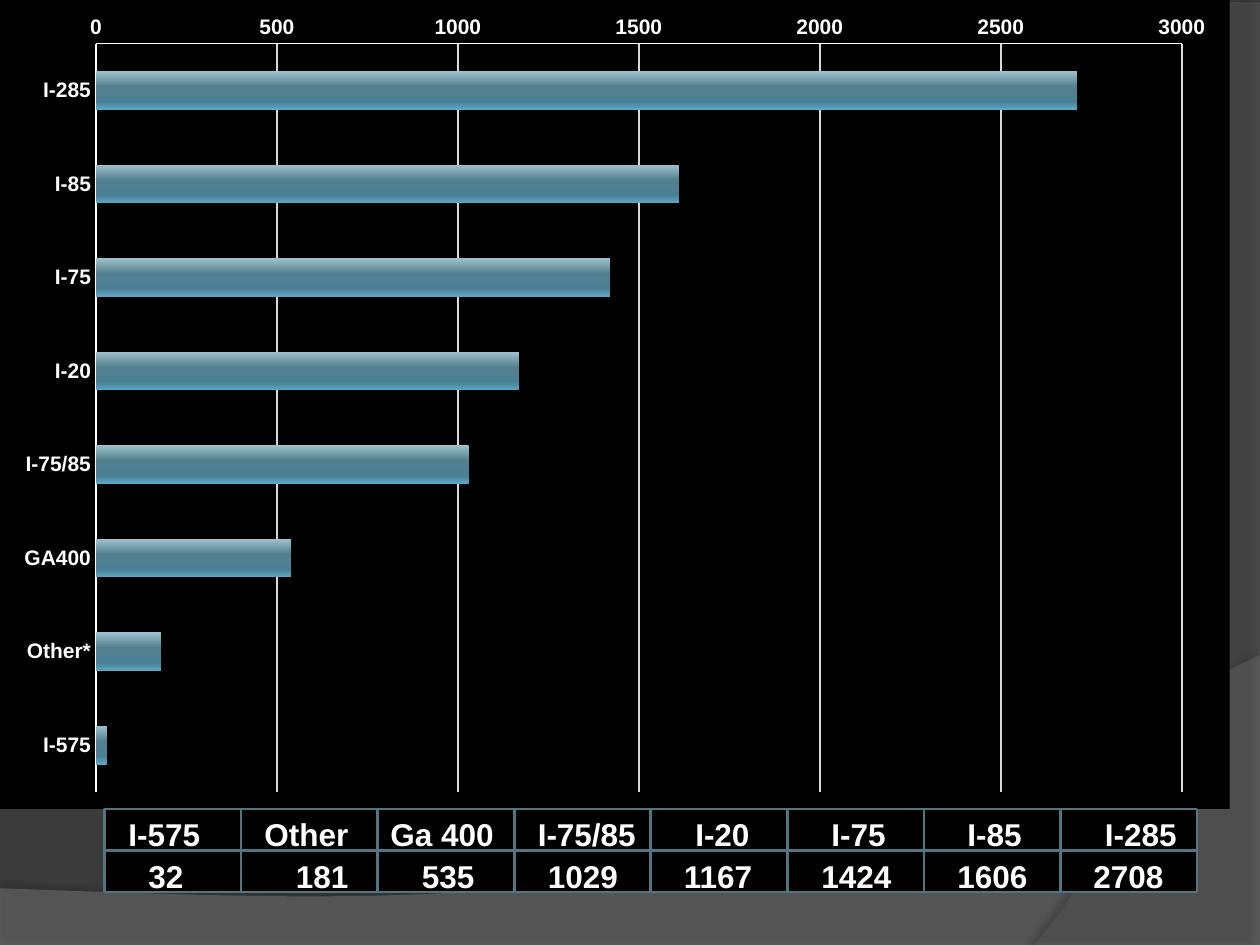
from lxml.etree import SubElement
from pptx import Presentation
from pptx.chart.data import CategoryChartData as ChartData
from pptx.dml.color import RGBColor as Rgb
from pptx.enum.chart import XL_CHART_TYPE as ChartKind, XL_TICK_MARK as Tick
from pptx.enum.shapes import MSO_SHAPE as Preset
from pptx.enum.text import MSO_AUTO_SIZE as AutoSize
from pptx.oxml import parse_xml
from pptx.oxml.ns import nsdecls, qn
from pptx.util import Inches, Pt

COLORS = {
    "page": "3B3B3B", "black": "000000", "white": "FFFFFF", "grid": "D9D9D9",
    "border": "517682", "swoosh": "7F7F7F", "side": "5E5E5E",
}
BAR_STOPS = [(0, "9FC1CD"), (40, "53808F"), (80, "4A8096"), (100, "5AA8C4")]
ROADS = ["I-285", "I-85", "I-75", "I-20", "I-75/85", "GA400", "Other*", "I-575"]
COUNTS = [2710, 1610, 1420, 1170, 1030, 540, 180, 30]
LABELS = [
    ("I-575", 0.92, 0.92), ("Other", 2, 0.92), ("Ga 400", 3, 1.25), ("I-75/85", 4.17, 1),
    ("I-20", 5.42, 0.83), ("I-75", 6.5, 0.67), ("I-85", 7.58, 0.67), ("I-285", 8.67, 0.78),
]
VALUES = [
    ("32", 1.08, 0.58), ("181", 2.25, 0.75), ("535", 3.25, 0.62), ("1029", 4.25, 0.76),
    ("1167", 5.33, 0.75), ("1424", 6.42, 0.76), ("1606", 7.5, 0.76), ("2708", 8.58, 0.76),
]
GRID_LEFT, GRID_TOP, GRID_WIDTH, ROW_HEIGHT = 0.83, 6.42, 8.67, 0.33


def color(name):
    return Rgb.from_string(COLORS[name])


def curve(start, first, second, end, steps=40):
    points = []
    for step in range(1, steps + 1):
        t = step / steps
        weights = ((1 - t) ** 3, 3 * t * (1 - t) ** 2, 3 * t * t * (1 - t), t ** 3)
        points.append(tuple(
            sum(weight * value for weight, value in zip(weights, axis))
            for axis in zip(start, first, second, end)
        ))
    return points


def solid_props(name):
    return parse_xml(
        f'<c:spPr {nsdecls("c", "a")}><a:solidFill><a:srgbClr val="{COLORS[name]}"/>'
        '</a:solidFill><a:ln><a:noFill/></a:ln></c:spPr>'
    )


class Slide:
    text_format = {"name": "Arial", "size": Pt(18), "bold": True}
    axis_format = {"name": "Arial", "size": Pt(12), "bold": True}

    def __init__(self, deck):
        self.page = deck.slides.add_slide(deck.slide_layouts[6])
        self.shapes = self.page.shapes
        fill = self.page.background.fill
        fill.solid()
        fill.fore_color.rgb = color("page")

    def style(self, font, values):
        for key, value in values.items():
            setattr(font, key, value)
        font.color.rgb = color("white")

    def backdrop(self, points, fill, opacity, shade, distance, angle):
        corners = [(Inches(x), Inches(y)) for x, y in points]
        builder = self.shapes.build_freeform(*corners[0])
        builder.add_line_segments(corners[1:], close=True)
        shape = builder.convert_to_shape()
        shape.fill.solid()
        shape.fill.fore_color.rgb = color(fill)
        shape.line.fill.background()
        shape.shadow.inherit = False
        props = shape.element.spPr
        tint = props.find(qn("a:solidFill"))[0]
        SubElement(tint, qn("a:alpha"), val=str(opacity * 1000))
        shadow = SubElement(
            props.find(qn("a:effectLst")), qn("a:outerShdw"), blurRad=str(Pt(4)),
            dist=str(Pt(distance)), dir=str(angle * 60000), algn="ctr", rotWithShape="0",
        )
        tone = SubElement(shadow, qn("a:srgbClr"), val=COLORS["black"])
        SubElement(tone, qn("a:alpha"), val=str(shade * 1000))

    def bar_chart(self, left, top, width, height):
        data = ChartData(number_format="General")
        data.categories = ROADS
        data.add_series("Series 1", COUNTS)
        chart = self.shapes.add_chart(
            ChartKind.BAR_CLUSTERED, Inches(left), Inches(top),
            Inches(width), Inches(height), data,
        ).chart
        chart.has_legend = False
        chart.has_title = False
        self.style(chart.font, self.axis_format)
        plot = chart.plots[0]
        plot.gap_width = 146
        plot.vary_by_categories = False
        for axis in (chart.category_axis, chart.value_axis):
            axis.major_tick_mark = axis.minor_tick_mark = Tick.NONE
            self.style(axis.tick_labels.font, self.axis_format)
            axis.format.line.color.rgb = color("white")
            axis.format.line.width = Pt(0.75)
        chart.category_axis.reverse_order = True
        scale = chart.value_axis
        for key, value in {"minimum_scale": 0, "maximum_scale": 3000, "major_unit": 500}.items():
            setattr(scale, key, value)
        scale.has_major_gridlines = True
        scale.major_gridlines.format.line.color.rgb = color("grid")
        scale.major_gridlines.format.line.width = Pt(1)
        self.bar_fill(plot.series[0])
        self.chart_frame(chart)

    def bar_fill(self, series):
        series.invert_if_negative = False
        series.format.fill.solid()
        props = series._element.find(qn("c:spPr"))
        stops = "".join(
            f'<a:gs pos="{place * 1000}"><a:srgbClr val="{tone}"/></a:gs>'
            for place, tone in BAR_STOPS
        )
        props.replace(props.find(qn("a:solidFill")), parse_xml(
            f'<a:gradFill {nsdecls("a")} rotWithShape="1"><a:gsLst>{stops}</a:gsLst>'
            '<a:lin ang="5400000" scaled="0"/></a:gradFill>'
        ))

    def chart_frame(self, chart):
        body = chart.element.find(qn("c:chart"))
        body.addnext(solid_props("black"))
        area = body.find(qn("c:plotArea"))
        area.append(solid_props("black"))
        for layout in area.findall(qn("c:layout")):
            area.remove(layout)
        layout = SubElement(area, qn("c:layout"))
        area.insert(0, layout)
        manual = SubElement(layout, qn("c:manualLayout"))
        settings = {
            "layoutTarget": "inner", "xMode": "edge", "yMode": "edge",
            "x": "0.078", "y": "0.054", "w": "0.883", "h": "0.925",
        }
        for key, value in settings.items():
            SubElement(manual, qn(f"c:{key}"), val=value)

    def cell(self, left, top, width, height):
        box = self.shapes.add_shape(
            Preset.RECTANGLE, Inches(left), Inches(top), Inches(width), Inches(height)
        )
        box.shadow.inherit = False
        box.fill.solid()
        box.fill.fore_color.rgb = color("black")
        box.line.color.rgb = color("border")
        box.line.width = Pt(1.5)

    def text(self, words, left, top, width):
        box = self.shapes.add_textbox(Inches(left), Inches(top), Inches(width), Inches(0.4))
        frame = box.text_frame
        frame.word_wrap = True
        frame.auto_size = AutoSize.SHAPE_TO_FIT_TEXT
        span = frame.paragraphs[0].add_run()
        span.text = words
        self.style(span.font, self.text_format)

    def row(self, top, entries):
        width = GRID_WIDTH / len(entries)
        for column in range(len(entries)):
            self.cell(GRID_LEFT + column * width, top, width, ROW_HEIGHT)
        for words, left, box_width in entries:
            self.text(words, left, top, box_width)


def main():
    deck = Presentation()
    deck.slide_width, deck.slide_height = Inches(10), Inches(7.5)
    slide = Slide(deck)
    wave = [(0, 7.05), (0, 7.51), (10, 7.51), (10, 5.2)]
    wave += curve((10, 5.2), (5.59, 7.29), (3.91, 7.19), (0, 7.05))[:-1]
    slide.backdrop(wave, "swoosh", 45, 35, 3.5, 270)
    side = [(10, 0.02), (10, 7.5), (8.21, 7.5)]
    side += curve((8.21, 7.5), (9.35, 6.19), (10.18, 3), (8, 0))
    slide.backdrop(side, "side", 40, 45, 4, 180)
    slide.bar_chart(0, 0, 9.76, 6.42)
    slide.row(GRID_TOP, LABELS)
    slide.row(GRID_TOP + ROW_HEIGHT, VALUES)
    deck.save("out.pptx")


if __name__ == "__main__":
    main()
